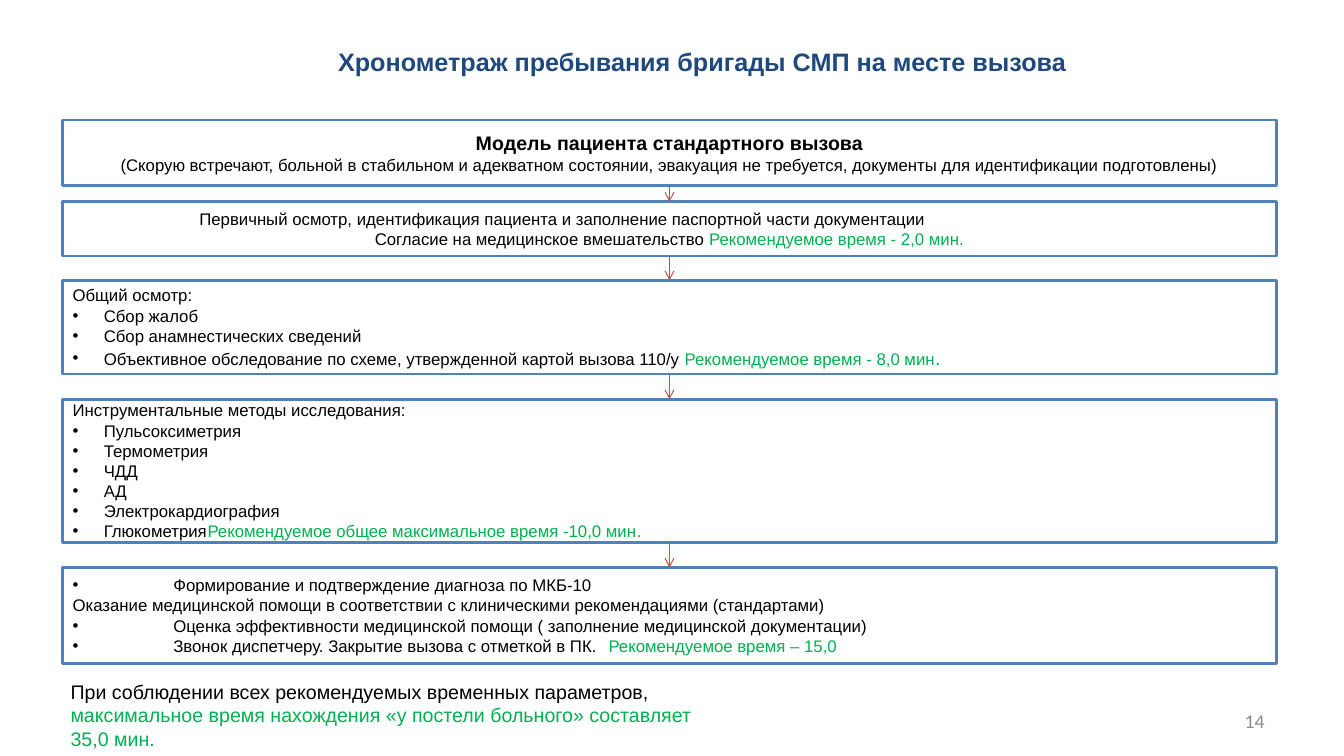
"""Build the flow slide on how long an ambulance crew stays at a call."""
from dataclasses import dataclass
from itertools import pairwise

from lxml.etree import SubElement
from pptx import Presentation
from pptx.dml.color import RGBColor
from pptx.enum.shapes import MSO_CONNECTOR, MSO_SHAPE
from pptx.enum.text import MSO_ANCHOR, MSO_AUTO_SIZE, PP_ALIGN
from pptx.oxml.ns import qn
from pptx.util import Pt

SCALE = 9144


@dataclass(frozen=True)
class Theme:
    ink: str = "000000"
    paper: str = "FFFFFF"
    edge: str = "4F81BD"
    arrow: str = "C0504D"
    time: str = "00B050"
    head: str = "1F497D"
    page: str = "8C8C8C"
    font: str = "Arial"
    small: int = 12
    large: int = 14
    title: int = 18


@dataclass(frozen=True)
class Row:
    runs: tuple
    hang: int = 0
    dent: int = 0
    tab: int = 0
    align: PP_ALIGN = PP_ALIGN.LEFT


THEME = Theme()


def tint(code):
    return RGBColor.from_string(code)


def px(*sizes):
    return [size * SCALE for size in sizes]


def write(para, text, size=THEME.small, color=THEME.ink, bold=False, font=THEME.font):
    run = para.add_run()
    run.text = text
    run.font.size = Pt(size)
    run.font.bold = bold
    run.font.name = font
    run.font.color.rgb = tint(color)


def row(*runs, **form):
    pairs = [(run, {}) if isinstance(run, str) else run for run in runs]
    return Row(tuple(pairs), **form)


def time(text):
    return text, {"color": THEME.time}


def large(text, **form):
    return text, {"size": THEME.large, **form}


class Deck:
    def __init__(self, theme, width, height):
        self.theme = theme
        self.file = Presentation()
        self.file.slide_width, self.file.slide_height = px(width, height)
        self.slide = self.file.slides.add_slide(self.file.slide_layouts[4])
        self.shapes = self.slide.shapes

    def fill(self, shape, rows, anchor=MSO_ANCHOR.TOP):
        frame = shape.text_frame
        frame.word_wrap = True
        frame.auto_size = MSO_AUTO_SIZE.NONE
        frame.vertical_anchor = anchor
        for index, line in enumerate(rows):
            para = frame.add_paragraph() if index else frame.paragraphs[0]
            self.style(para, line)
            for text, form in line.runs:
                write(para, text, **form)

    def style(self, para, line):
        props = para._p.get_or_add_pPr()
        props.set("marL", str(line.dent * SCALE + line.hang * SCALE))
        props.set("indent", str(-line.hang * SCALE))
        if line.hang:
            SubElement(props, qn("a:buFont"), typeface=self.theme.font)
            SubElement(props, qn("a:buChar"), char="•")
        else:
            SubElement(props, qn("a:buNone"))
        if line.tab:
            tabs = SubElement(props, qn("a:tabLst"))
            SubElement(tabs, qn("a:tab"), pos=str(line.tab * SCALE), algn="l")
        para.alignment = line.align
        para.space_before = Pt(0)

    def holder(self, index, place, rows, anchor=MSO_ANCHOR.TOP):
        shape = self.slide.placeholders[index]
        shape.left, shape.top, shape.width, shape.height = px(*place)
        self.fill(shape, rows, anchor)
        return shape

    def frame(self, shape):
        shape.fill.solid()
        shape.fill.fore_color.rgb = tint(self.theme.paper)
        shape.line.color.rgb = tint(self.theme.edge)
        shape.line.width = Pt(2)
        return shape

    def box(self, place, rows):
        shape = self.shapes.add_shape(MSO_SHAPE.FLOWCHART_PROCESS, *px(*place))
        shape.shadow.inherit = False
        self.fill(shape, rows, MSO_ANCHOR.MIDDLE)
        return self.frame(shape)

    def list(self, index, place, rows):
        return self.frame(self.holder(index, place, rows, MSO_ANCHOR.MIDDLE))

    def label(self, place, rows):
        self.fill(self.shapes.add_textbox(*px(*place)), rows, MSO_ANCHOR.MIDDLE)

    def arrow(self, start, end):
        link = self.shapes.add_connector(MSO_CONNECTOR.STRAIGHT, 0, 0, 0, 0)
        link.begin_connect(start, 2)
        link.end_connect(end, 0)
        link.line.color.rgb = tint(self.theme.arrow)
        link.line.width = Pt(0.75)
        SubElement(link.line._get_or_add_ln(), qn("a:tailEnd"), type="arrow")
        SubElement(link._element.spPr, qn("a:effectLst"))


def main():
    deck = Deck(THEME, 1334, 750)
    mid = PP_ALIGN.CENTER
    left, width = 62, 1205

    deck.holder(0, (100, 41, 1194, 40), [
        row(("Хронометраж пребывания бригады СМП на месте вызова",
             {"size": THEME.title, "color": THEME.head, "bold": True}), align=mid)])

    model = deck.box((left, 119, width, 65), [
        row(large("Модель пациента стандартного вызова", bold=True), align=mid),
        row("(Скорую встречают, больной в стабильном и адекватном состоянии, "
            "эвакуация не требуется, документы для идентификации подготовлены)",
            align=mid)])
    first = deck.box((left, 200, width, 54), [
        row("Первичный осмотр, идентификация пациента и заполнение паспортной "
            "части документации", dent=126),
        row("Согласие на медицинское вмешательство ",
            time("Рекомендуемое время - 2,0 мин."), align=mid)])
    check = deck.list(1, (left, 278, width, 93), [
        row("Общий осмотр:"),
        row("Сбор жалоб", hang=31),
        row("Сбор анамнестических сведений", hang=31),
        row("Объективное обследование по схеме, утвержденной картой вызова 110/у ",
            time("Рекомендуемое время - 8,0 мин"),
            large(".", color=THEME.time), hang=31)])
    tests = ["Пульсоксиметрия", "Термометрия", "ЧДД", "АД", "Электрокардиография"]
    tools = deck.list(2, (left, 396, width, 142), [
        row("Инструментальные методы исследования:"),
        *[row(test, hang=31) for test in tests],
        row("Глюкометрия\t",
            time("Рекомендуемое общее максимальное время -10,0 мин"),
            (".", {"color": THEME.arrow}), hang=31, tab=134)])
    care = deck.list(3, (left, 563, width, 95), [
        row("Формирование и подтверждение диагноза по МКБ-10", hang=100),
        row("Оказание медицинской помощи в соответствии с клиническими "
            "рекомендациями (стандартами)"),
        row("Оценка эффективности медицинской помощи ( заполнение медицинской "
            "документации)", hang=100),
        row("Звонок диспетчеру. Закрытие вызова с отметкой в ПК.\t",
            time("Рекомендуемое время – 15,0"), hang=100, tab=532)])

    for start, end in pairwise([model, first, check, tools, care]):
        deck.arrow(start, end)

    deck.holder(4, (60, 669, 667, 81), [
        row(large("При соблюдении всех рекомендуемых временных параметров,")),
        row(large("максимальное время нахождения «у постели больного» составляет "
                  "35,0 мин.", color=THEME.time))])
    deck.label((956, 695, 309, 40), [
        row(large("14", color=THEME.page, font="Calibri"), align=PP_ALIGN.RIGHT)])

    deck.file.save("out.pptx")


if __name__ == "__main__":
    main()
